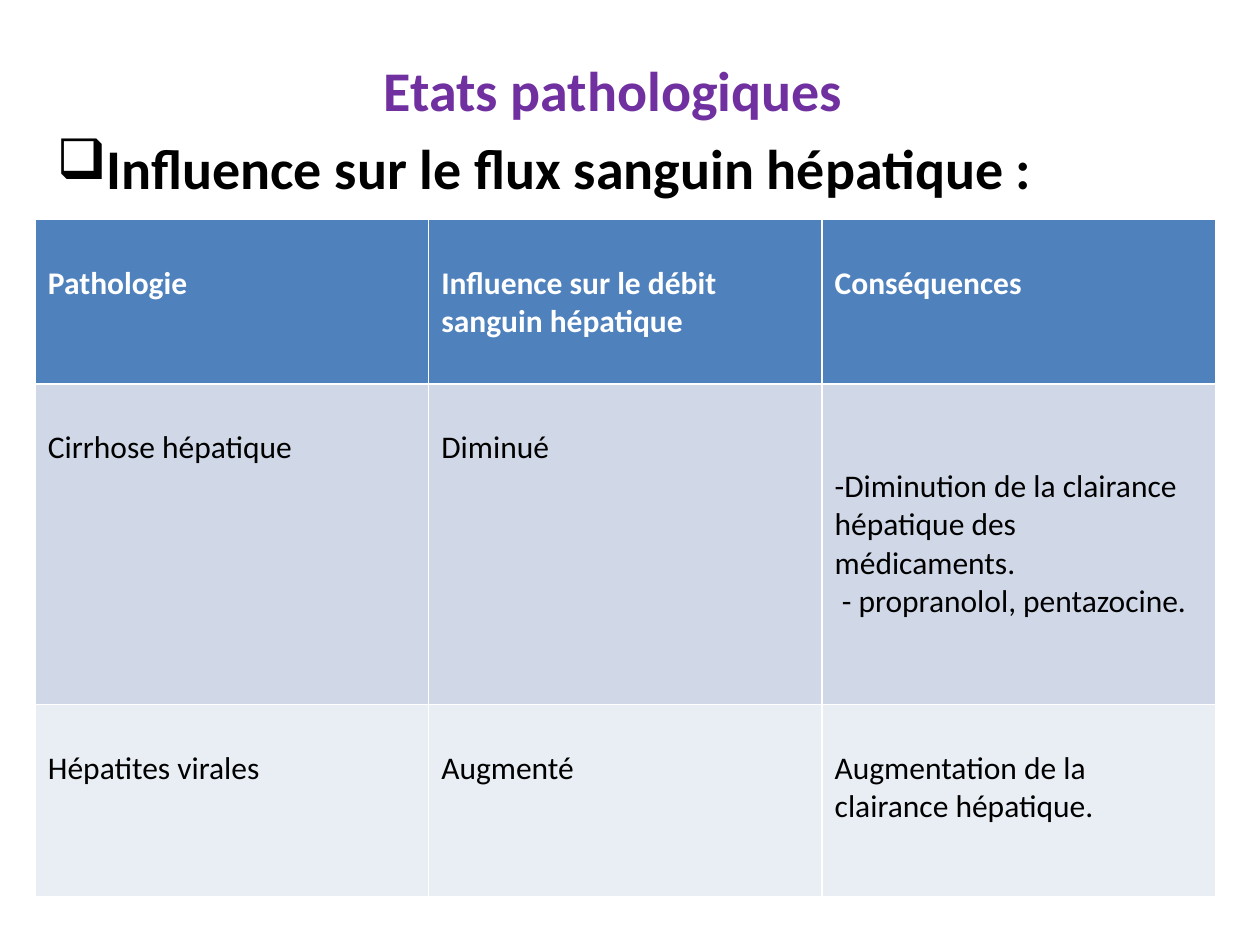
from lxml.etree import SubElement
from pptx import Presentation
from pptx.dml.color import RGBColor
from pptx.enum.text import MSO_ANCHOR, PP_ALIGN
from pptx.oxml.ns import qn
from pptx.util import Pt

FONT = "Calibri"
PURPLE = RGBColor(0x70, 0x30, 0xA0)
BLACK = RGBColor(0, 0, 0)
WHITE = RGBColor(0xFF, 0xFF, 0xFF)
HEADER_BLUE = RGBColor(0x4F, 0x81, 0xBD)
BAND_BLUES = (RGBColor(0xD0, 0xD8, 0xE8), RGBColor(0xE9, 0xED, 0xF4))

CELL_INSET = 3.6
LINE_HEIGHT = 22
ROW_HEIGHTS = (94, 183, 110)
ROWS = (
    ("Pathologie", "Influence sur le débit sanguin hépatique", "Conséquences"),
    ("Cirrhose hépatique", "Diminué",
     "-Diminution de la clairance hépatique des médicaments.\n - propranolol, pentazocine."),
    ("Hépatites virales", "Augmenté", "Augmentation de la clairance hépatique."),
)


def add_run(paragraph, text, size, color, bold):
    run = paragraph.add_run()
    run.text = text
    run.font.name = FONT
    run.font.size = Pt(size)
    run.font.bold = bold
    run.font.color.rgb = color


def prepare_heading(heading, left, top, width, height):
    """Place a heading without insets, anchored at its top."""
    heading.left, heading.top = Pt(left), Pt(top)
    heading.width, heading.height = Pt(width), Pt(height)
    frame = heading.text_frame
    frame.word_wrap = True
    frame.vertical_anchor = MSO_ANCHOR.TOP
    frame.margin_left = frame.margin_right = frame.margin_top = frame.margin_bottom = 0
    return frame.paragraphs[0]


def place_title(slide, left, top, width, height):
    paragraph = prepare_heading(slide.shapes.title, left, top, width, height)
    paragraph.alignment = PP_ALIGN.CENTER
    add_run(paragraph, "Etats pathologiques", 32, PURPLE, True)


def add_subtitle(slide, left, top, width, height):
    subtitle = slide.shapes.add_textbox(0, 0, 0, 0)
    paragraph = prepare_heading(subtitle, left, top, width, height)
    properties = paragraph._p.get_or_add_pPr()
    properties.set("marL", str(Pt(27)))
    properties.set("indent", str(-Pt(27)))
    SubElement(properties, qn("a:buChar"), char="❑")
    add_run(paragraph, "Influence sur le flux sanguin hépatique :", 32, BLACK, True)


def fill_cell(cell, text, fill, color, bold, lines_above):
    cell.fill.solid()
    cell.fill.fore_color.rgb = fill
    cell.margin_top = Pt(CELL_INSET + lines_above * LINE_HEIGHT)
    frame = cell.text_frame
    for index, line in enumerate(text.split("\n")):
        paragraph = frame.add_paragraph() if index else frame.paragraphs[0]
        add_run(paragraph, line, 18, color, bold)


def add_pathology_table(slide, left, top, width):
    table = slide.shapes.add_table(
        len(ROWS), len(ROWS[0]), Pt(left), Pt(top), Pt(width), Pt(sum(ROW_HEIGHTS))
    ).table
    for row_index, texts in enumerate(ROWS):
        table.rows[row_index].height = Pt(ROW_HEIGHTS[row_index])
        is_header = row_index == 0
        fill = HEADER_BLUE if is_header else BAND_BLUES[row_index - 1]
        for column_index, text in enumerate(texts):
            lines_above = 2 if "\n" in text else 1
            fill_cell(table.cell(row_index, column_index), text, fill,
                      WHITE if is_header else BLACK, is_header, lines_above)


def main():
    presentation = Presentation()
    presentation.slide_width, presentation.slide_height = Pt(720), Pt(540)
    slide = presentation.slides.add_slide(presentation.slide_layouts[5])
    place_title(slide, 32.4, 31.5, 636, 40)
    add_subtitle(slide, 32.4, 76, 644, 40)
    add_pathology_table(slide, 20.2, 125.5, 674.4)
    presentation.save("out.pptx")


if __name__ == "__main__":
    main()
